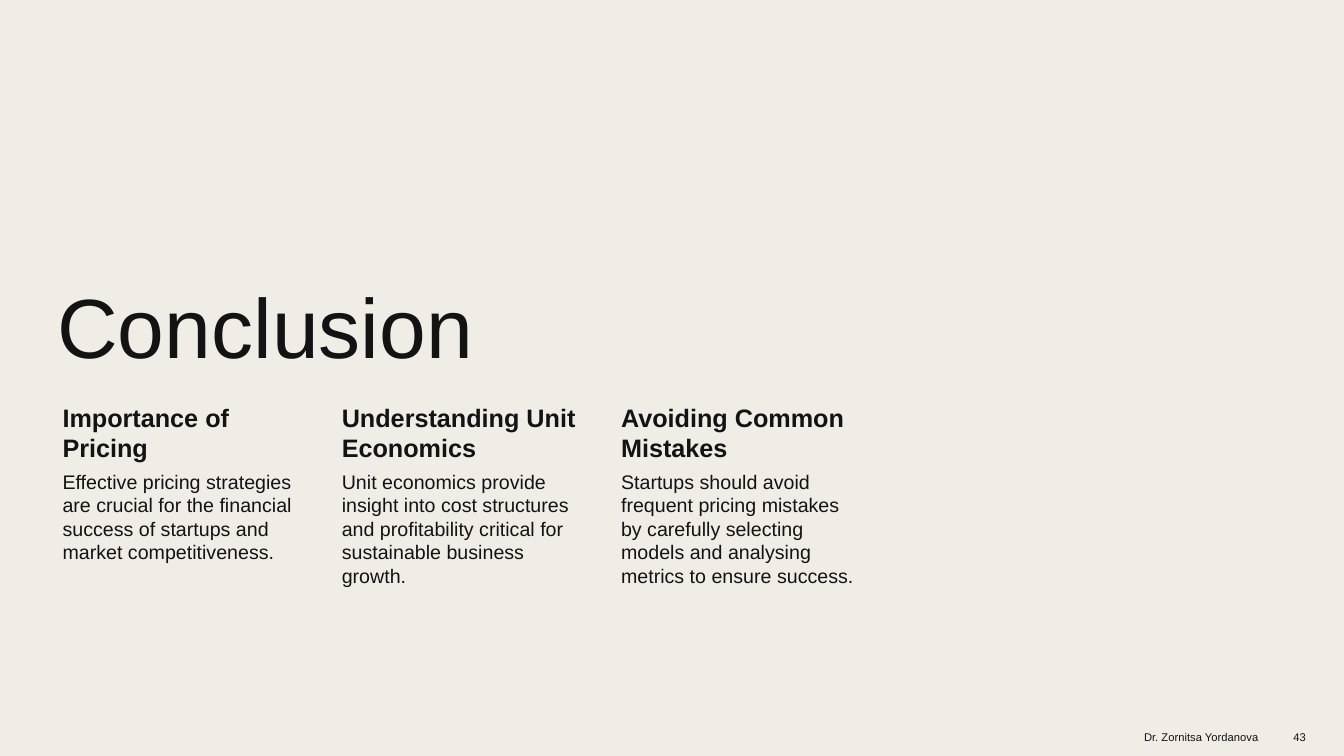
import pptx
import pptx.util
import pptx.dml.color
import pptx.enum.text
from dataclasses import dataclass

Inches = pptx.util.Inches
Align = pptx.enum.text.PP_ALIGN
Anchor = pptx.enum.text.MSO_ANCHOR


@dataclass(frozen=True)
class Theme:
    font: str = "Arial"
    ink: str = "131313"
    paper: str = "F0EDE6"
    title: int = 60
    head: int = 18
    body: int = 14
    foot: int = 8


THEME = Theme()
LEFT = 0.47
STEP = 2.77
WIDTH = 2.52
POINTS = [
    ("Importance of Pricing",
     "Effective pricing strategies are crucial for the financial success "
     "of startups and market competitiveness."),
    ("Understanding Unit Economics",
     "Unit economics provide insight into cost structures and profitability "
     "critical for sustainable business growth."),
    ("Avoiding Common Mistakes",
     "Startups should avoid frequent pricing mistakes by carefully selecting "
     "models and analysing metrics to ensure success."),
]


def color(code):
    return pptx.dml.color.RGBColor.from_string(code)


def add_text(shapes, text, box, size, bold=False, align=Align.LEFT,
             anchor=Anchor.TOP, insets=(0.1, 0.05, 0.1, 0.05)):
    """Add a wrapped text box; box and insets are in inches."""
    frame = shapes.add_textbox(*map(Inches, box)).text_frame
    frame.word_wrap = True
    frame.vertical_anchor = anchor
    (frame.margin_left, frame.margin_top,
     frame.margin_right, frame.margin_bottom) = map(Inches, insets)
    para = frame.paragraphs[0]
    para.text = text
    para.alignment = align
    font = para.font
    font.name = THEME.font
    font.size = pptx.util.Pt(size)
    font.bold = bold
    font.color.rgb = color(THEME.ink)
    return para


def add_title(slide, text):
    para = add_text(slide.shapes, text, (LEFT, 1.78, 8.06, 2.01),
                    THEME.title, anchor=Anchor.BOTTOM)
    para.line_spacing = 0.9


def add_point(group, left, head, body):
    add_text(group.shapes, head, (left, 3.96, WIDTH, 0.68), THEME.head,
             bold=True, insets=(0.15, 0.03, 0.03, 0.03))
    add_text(group.shapes, body, (left, 4.64, WIDTH, 1.76), THEME.body,
             insets=(0.15, 0.02, 0.02, 0.02))


def add_footer(slide, text, left, width):
    add_text(slide.shapes, text, (left, 7.13, width, 0.37), THEME.foot,
             align=Align.RIGHT, anchor=Anchor.MIDDLE)


def main():
    deck = pptx.Presentation()
    deck.slide_width = Inches(13.33)
    deck.slide_height = Inches(7.5)
    slide = deck.slides.add_slide(deck.slide_layouts[6])
    fill = slide.background.fill
    fill.solid()
    fill.fore_color.rgb = color(THEME.paper)

    add_title(slide, "Conclusion")
    group = slide.shapes.add_group_shape()
    for index, (head, body) in enumerate(POINTS):
        add_point(group, LEFT + index * STEP, head, body)
    add_footer(slide, "43", 12.55, 0.5)
    add_footer(slide, "Dr. Zornitsa Yordanova", 9.69, 2.89)
    deck.save("out.pptx")


if __name__ == "__main__":
    main()
